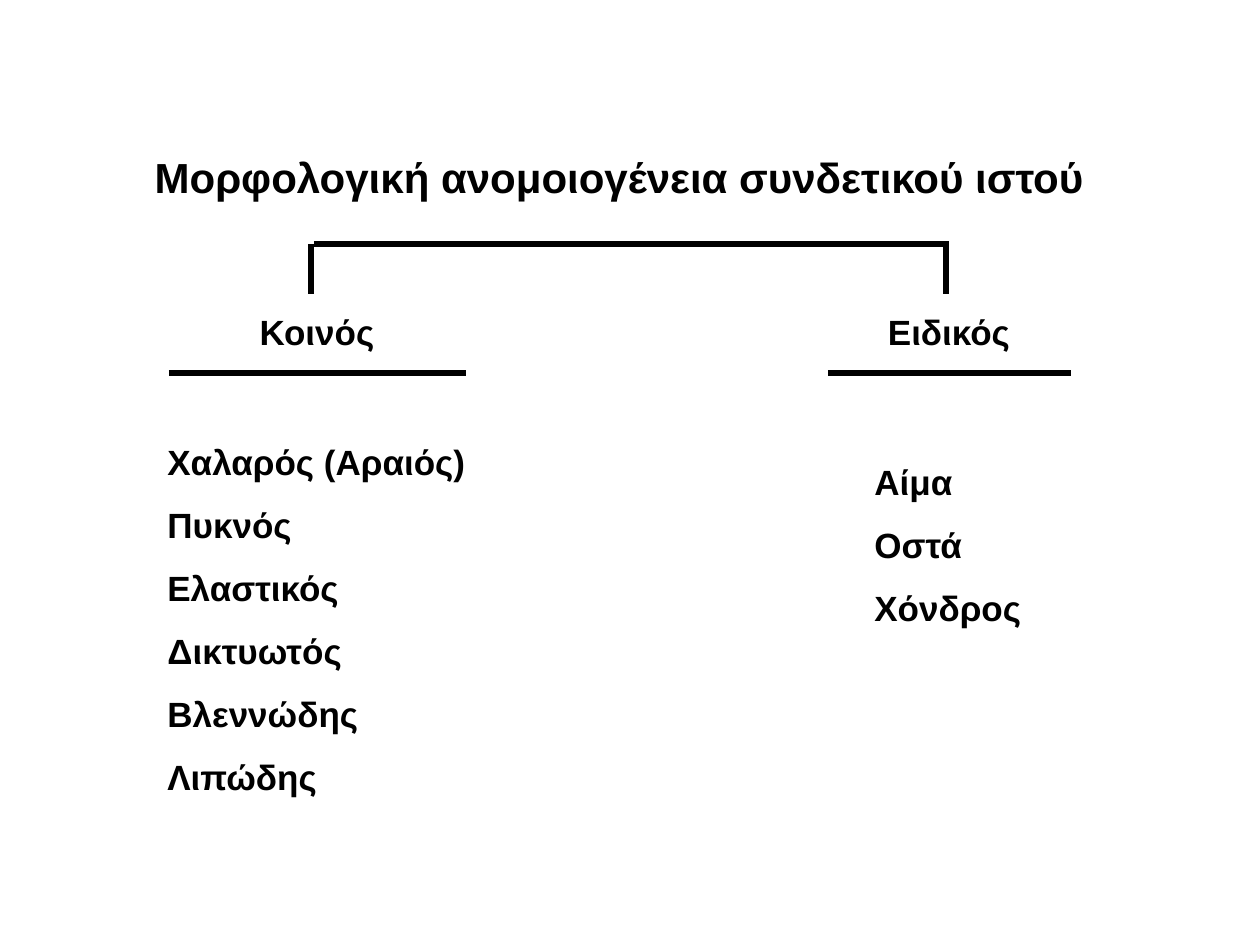
from dataclasses import dataclass

from pptx import Presentation
from pptx.dml.color import RGBColor
from pptx.enum.shapes import MSO_CONNECTOR
from pptx.enum.text import MSO_ANCHOR, MSO_AUTO_SIZE, PP_ALIGN
from pptx.oxml.ns import qn
from pptx.util import Inches, Pt
from lxml.etree import SubElement

PX_PER_INCH = 126


@dataclass(frozen=True)
class Theme:
    font: str = "Arial"
    ink: RGBColor = RGBColor(0, 0, 0)
    paper: RGBColor = RGBColor(255, 255, 255)
    title_size: int = 24
    body_size: int = 20
    line_width: int = 3


THEME = Theme()

TITLE = "Μορφολογική ανομοιογένεια συνδετικού ιστού"
BRACKET_TOP, BRACKET_BOTTOM = 244, 294
HEADING_TOP, HEADING_WIDTH, HEADING_HEIGHT = 304, 238, 55
UNDERLINE_Y = 373

# Each branch: heading, its left edge, bracket leg, underline ends, list box, items
BRANCHES = [
    ("Κοινός", 198, 311, (169, 466), (155, 413, 325, 387),
     ["Χαλαρός (Αραιός)", "Πυκνός", "Ελαστικός", "Δικτυωτός", "Βλεννώδης", "Λιπώδης"]),
    ("Ειδικός", 830, 946, (828, 1071), (862, 433, 174, 195),
     ["Αίμα", "Οστά", "Χόνδρος"]),
]


def px(length):
    return Inches(length / PX_PER_INCH)


def set_attributes(target, values):
    for name, value in values.items():
        setattr(target, name, value)


def write_text(box, lines, size, wrap=False, align=PP_ALIGN.LEFT, spacing=1.0):
    frame = box.text_frame
    frame.text = "\n".join(lines)
    set_attributes(frame, {
        "word_wrap": wrap,
        "auto_size": MSO_AUTO_SIZE.SHAPE_TO_FIT_TEXT,
        "vertical_anchor": MSO_ANCHOR.TOP,
    })
    for paragraph in frame.paragraphs:
        set_attributes(paragraph, {
            "alignment": align, "line_spacing": spacing, "space_before": Pt(0),
        })
        for run in paragraph.runs:
            set_attributes(run.font, {"name": THEME.font, "size": Pt(size), "bold": True})
            run.font.color.rgb = THEME.ink


def add_title(slide, text):
    title = slide.shapes.title
    set_attributes(title, {
        "left": px(142), "top": px(145), "width": px(974), "height": px(63),
    })
    write_text(title, [text], THEME.title_size)


def add_text(slide, bounds, lines, **style):
    box = slide.shapes.add_textbox(*map(px, bounds))
    write_text(box, lines, THEME.body_size, **style)


def add_line(slide, *ends):
    connector = slide.shapes.add_connector(MSO_CONNECTOR.STRAIGHT, *map(px, ends))
    connector.line.width = Pt(THEME.line_width)
    connector.line.color.rgb = THEME.ink
    SubElement(connector._element.spPr, qn("a:effectLst"))


def add_branch(slide, heading, left, leg, underline, list_bounds, items):
    add_line(slide, leg, BRACKET_TOP, leg, BRACKET_BOTTOM)
    add_text(slide, (left, HEADING_TOP, HEADING_WIDTH, HEADING_HEIGHT), [heading],
             wrap=True, align=PP_ALIGN.CENTER)
    start, end = underline
    add_line(slide, start, UNDERLINE_Y, end, UNDERLINE_Y)
    add_text(slide, list_bounds, items, spacing=1.5)


def main():
    deck = Presentation()
    set_attributes(deck, {"slide_width": px(1260), "slide_height": px(945)})
    slide = deck.slides.add_slide(deck.slide_layouts[5])
    slide.background.fill.solid()
    slide.background.fill.fore_color.rgb = THEME.paper

    # Title and the bracket below it
    add_title(slide, TITLE)
    add_line(slide, 314, BRACKET_TOP, 949, BRACKET_TOP)

    # The two kinds of tissue
    for branch in BRANCHES:
        add_branch(slide, *branch)

    deck.save("out.pptx")


if __name__ == "__main__":
    main()
